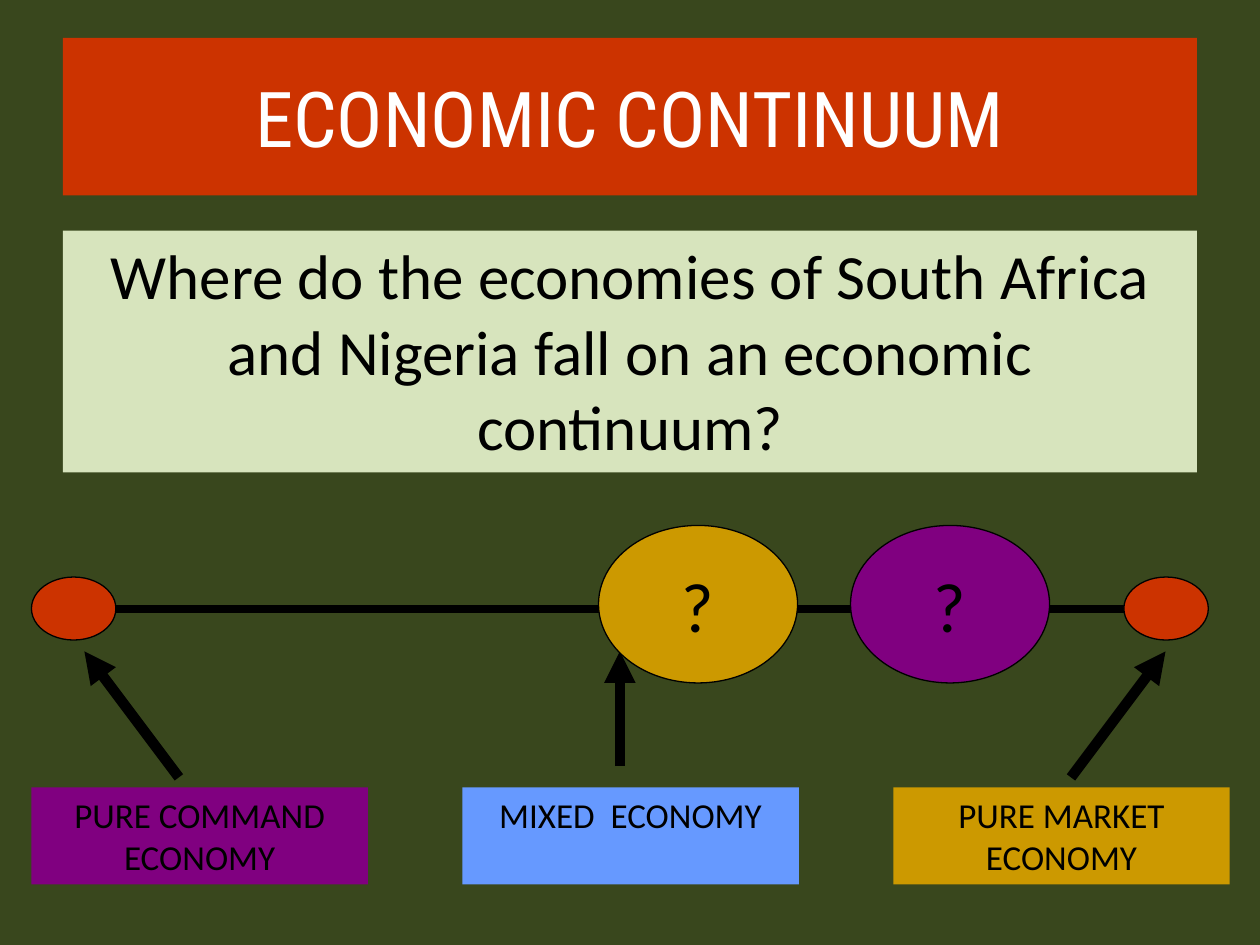
from lxml.etree import SubElement
from pptx import Presentation
from pptx.dml.color import RGBColor
from pptx.enum.shapes import MSO_CONNECTOR as CONN, MSO_SHAPE as SHAPE
from pptx.enum.text import MSO_ANCHOR as ANCHOR, MSO_AUTO_SIZE as FIT, PP_ALIGN as ALIGN
from pptx.oxml.ns import qn
from pptx.util import Inches, Pt

COLORS = {
    "background": "39471D",
    "red": "CC3300",
    "green": "D7E4BD",
    "purple": "800080",
    "blue": "6699FF",
    "gold": "CC9900",
    "black": "000000",
    "white": "FFFFFF",
}


class ContinuumSlide:
    """Hold the slide and its style, with a method for each kind of element."""

    def __init__(self, prs):
        self.slide = prs.slides.add_slide(prs.slide_layouts[6])
        fill = self.slide.background.fill
        fill.solid()
        fill.fore_color.rgb = self.color("background")

    def color(self, name):
        return RGBColor.from_string(COLORS[name])

    def shape(self, kind, box, fill):
        s = self.slide.shapes.add_shape(kind, *map(Inches, box))
        s.shadow.inherit = False
        s.fill.solid()
        s.fill.fore_color.rgb = self.color(fill)
        s.line.fill.background()
        return s

    def label(self, s, text, size, font="Calibri", color="black", anchor=ANCHOR.MIDDLE):
        tf = s.text_frame
        tf.word_wrap = True
        tf.vertical_anchor = anchor
        p = tf.paragraphs[0]
        p.text = text
        p.alignment = ALIGN.CENTER
        p.font.size = Pt(size)
        p.font.name = font
        p.font.color.rgb = self.color(color)
        return tf

    def title(self, box, text):
        s = self.shape(SHAPE.RECTANGLE, box, "red")
        self.label(s, text, 44, "Roboto Condensed", "white")

    def panel(self, box, text, fill, size):
        s = self.shape(SHAPE.RECTANGLE, box, fill)
        tf = self.label(s, text, size, anchor=ANCHOR.TOP)
        tf.auto_size = FIT.SHAPE_TO_FIT_TEXT

    def ellipse(self, box, fill, text=None):
        s = self.shape(SHAPE.OVAL, box, fill)
        s.line.color.rgb = self.color("black")
        s.line.width = Pt(0.75)
        if text:
            self.label(s, text, 40).word_wrap = False

    def line(self, start, end, width, **ends):
        s = self.slide.shapes.add_connector(CONN.STRAIGHT, *map(Inches, start + end))
        s.line.color.rgb = self.color("black")
        s.line.width = Pt(width)
        ln = s.line._get_or_add_ln()
        for tag, kind in ends.items():
            SubElement(ln, qn(f"a:{tag}"), type=kind)
        SubElement(s._element.spPr, qn("a:effectLst"))


def main():
    prs = Presentation()
    prs.slide_width, prs.slide_height = Inches(10), Inches(7.5)
    s = ContinuumSlide(prs)

    s.title((0.5, 0.3, 9, 1.25), "ECONOMIC CONTINUUM")
    s.line((0.67, 4.83), (9.17, 4.83), 4.5, headEnd="oval", tailEnd="oval")
    for left in (0.25, 8.92):
        s.ellipse((left, 4.58, 0.67, 0.5), "red")

    for start, end in (
        ((1.42, 6.17), (0.67, 5.17)),
        ((8.5, 6.17), (9.25, 5.17)),
        ((4.92, 6.08), (4.92, 5.17)),
    ):
        s.line(start, end, 6, tailEnd="triangle")

    economies = (
        ("PURE COMMAND ECONOMY", "purple"),
        ("MIXED  ECONOMY", "blue"),
        ("PURE MARKET ECONOMY", "gold"),
    )
    for i, (text, fill) in enumerate(economies):
        s.panel((0.25 + i * 3.42, 6.25, 2.67, 0.77), text, fill, 20)

    question = (
        "Where do the economies of South Africa and Nigeria "
        "fall on an economic continuum?"
    )
    s.panel((0.5, 1.83, 9, 1.92), question, "green", 36)

    for left, fill in ((6.75, "purple"), (4.75, "gold")):
        s.ellipse((left, 4.17, 1.58, 1.25), fill, "?")

    prs.save("out.pptx")


if __name__ == "__main__":
    main()
